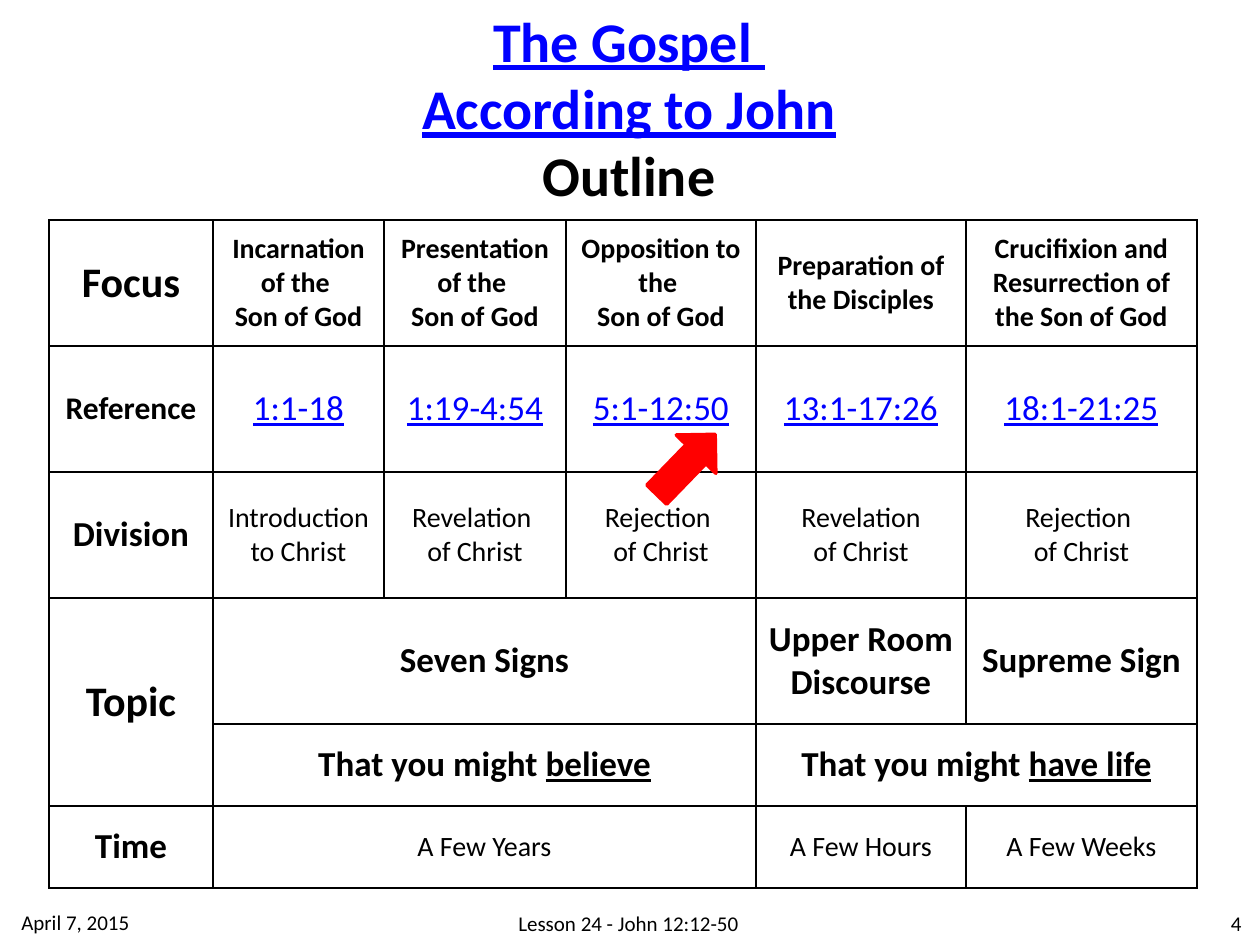
from dataclasses import dataclass

from lxml.etree import SubElement
from pptx import Presentation
from pptx.dml.color import RGBColor
from pptx.enum.shapes import MSO_SHAPE as Preset
from pptx.enum.text import MSO_ANCHOR as Anchor, MSO_AUTO_SIZE as AutoSize, PP_ALIGN as Align
from pptx.oxml.ns import qn
from pptx.util import Pt

PX = 914400 / 126
FONT = "Calibri"
COLORS = {"ink": "000000", "link": "0000FF", "arrow": "FF0000"}
COLUMNS = (164, 171, 182, 190, 210, 231)
ROWS = (126, 126, 126, 126, 82, 82)


@dataclass(frozen=True)
class Style:
    size: int
    bold: bool = False
    color: str = "ink"
    underline: bool = False


@dataclass(frozen=True)
class Cell:
    row: int
    column: int
    text: str
    style: Style
    rows: int = 1
    columns: int = 1
    underlined: str = ""


@dataclass(frozen=True)
class Label:
    text: str
    left: int
    top: int
    width: int
    height: int
    align: Align


HEAD, TOPIC = Style(24, True), Style(20, True)
FOCUS, SIDE = Style(16, True), Style(18, True)
REFERENCE = Style(20, color="link", underline=True)
BODY, FOOTER = Style(16), Style(12)
TITLE, TITLE_LINK = Style(32, True), Style(32, True, "link", True)

GRID = (
    ("Focus", HEAD, FOCUS, (
        "Incarnation of the \nSon of God", "Presentation of the \nSon of God",
        "Opposition to the \nSon of God", "Preparation of the Disciples",
        "Crucifixion and Resurrection of the Son of God")),
    ("Reference", SIDE, REFERENCE, (
        "1:1-18", "1:19-4:54", "5:1-12:50", "13:1-17:26", "18:1-21:25")),
    ("Division", TOPIC, BODY, (
        "Introduction to Christ", "Revelation \nof Christ", "Rejection \nof Christ",
        "Revelation\nof Christ", "Rejection \nof Christ")),
)
SUMMARY = (
    Cell(3, 0, "Topic", HEAD, rows=2),
    Cell(3, 1, "Seven Signs", TOPIC, columns=3),
    Cell(3, 4, "Upper Room Discourse", TOPIC),
    Cell(3, 5, "Supreme Sign", TOPIC),
    Cell(4, 1, "That you might ", TOPIC, columns=3, underlined="believe"),
    Cell(4, 4, "That you might ", TOPIC, columns=2, underlined="have life"),
    Cell(5, 0, "Time", TOPIC),
    Cell(5, 1, "A Few Years", BODY, columns=3),
    Cell(5, 4, "A Few Hours", BODY),
    Cell(5, 5, "A Few Weeks", BODY),
)
FOOTERS = (
    Label("Lesson 24 - John 12:12-50", 287, 898, 683, 50, Align.CENTER),
    Label("4", 1159, 898, 95, 50, Align.RIGHT),
    Label("April 7, 2015", 9, 897, 199, 50, Align.LEFT),
)


def px(*lengths: int) -> list[int]:
    """Turn pixel lengths into EMU."""
    return [round(length * PX) for length in lengths]


def rgb(name: str) -> RGBColor:
    """Look up a named colour."""
    return RGBColor.from_string(COLORS[name])


def style_paragraph(paragraph, style: Style, align: Align) -> None:
    """Apply alignment and one font to a paragraph."""
    paragraph.alignment = align
    font = paragraph.font
    font.name, font.size = FONT, Pt(style.size)
    font.bold, font.underline = style.bold, style.underline
    font.color.rgb = rgb(style.color)


def border_cell(cell) -> None:
    """Draw thin lines on all four sides of a table cell."""
    properties = cell._tc.get_or_add_tcPr()
    for position, side in enumerate(("lnL", "lnR", "lnT", "lnB")):
        line = SubElement(properties, qn(f"a:{side}"), w=str(Pt(1)))
        properties.remove(line)
        properties.insert(position, line)
        fill = SubElement(line, qn("a:solidFill"))
        SubElement(fill, qn("a:srgbClr"), val=COLORS["ink"])


def fill_cell(table, item: Cell) -> None:
    """Merge and write one cell of the outline."""
    cell = table.cell(item.row, item.column)
    if item.rows * item.columns > 1:
        cell.merge(table.cell(item.row + item.rows - 1, item.column + item.columns - 1))
    cell.text = item.text
    for paragraph in cell.text_frame.paragraphs:
        style_paragraph(paragraph, item.style, Align.CENTER)
    if item.underlined:
        run = cell.text_frame.paragraphs[-1].add_run()
        run.text, run.font.underline = item.underlined, True


def add_outline(slide) -> None:
    """Add the outline table."""
    frame = slide.shapes.add_table(
        len(ROWS), len(COLUMNS), *px(49, 220, sum(COLUMNS), sum(ROWS)))
    table = frame.table
    table.first_row = table.horz_banding = False
    for column, width in zip(table.columns, px(*COLUMNS)):
        column.width = width
    for row, height in zip(table.rows, px(*ROWS)):
        row.height = height
    for cell in table.iter_cells():
        cell.fill.background()
        cell.vertical_anchor = Anchor.MIDDLE
        border_cell(cell)
    for row, (head, head_style, style, texts) in enumerate(GRID):
        fill_cell(table, Cell(row, 0, head, head_style))
        for column, text in enumerate(texts, 1):
            fill_cell(table, Cell(row, column, text, style))
    for item in SUMMARY:
        fill_cell(table, item)


def add_title(slide) -> None:
    """Add the three-line title."""
    frame = slide.shapes.add_textbox(*px(401, 0, 456, 217)).text_frame
    frame.word_wrap, frame.auto_size = False, AutoSize.SHAPE_TO_FIT_TEXT
    frame.text = "The Gospel \nAccording to John\nOutline"
    for paragraph, style in zip(frame.paragraphs, (TITLE_LINK, TITLE_LINK, TITLE)):
        style_paragraph(paragraph, style, Align.CENTER)


def add_arrow(slide) -> None:
    """Add the arrow that points at the current reference."""
    arrow = slide.shapes.add_shape(Preset.RIGHT_ARROW, *px(644, 437, 84, 55))
    arrow.rotation = 314.1
    arrow.shadow.inherit = False
    arrow.fill.solid()
    arrow.fill.fore_color.rgb = arrow.line.color.rgb = rgb("arrow")
    arrow.line.width = Pt(2)


def add_footer(slide, label: Label) -> None:
    """Add one footer text."""
    box = slide.shapes.add_textbox(*px(label.left, label.top, label.width, label.height))
    frame = box.text_frame
    frame.word_wrap, frame.vertical_anchor = True, Anchor.MIDDLE
    frame.text = label.text
    style_paragraph(frame.paragraphs[0], FOOTER, label.align)


def main() -> None:
    """Build the slide and save it."""
    presentation = Presentation()
    presentation.slide_width, presentation.slide_height = px(1260, 945)
    slide = presentation.slides.add_slide(presentation.slide_layouts[6])
    add_title(slide)
    add_outline(slide)
    add_arrow(slide)
    for label in FOOTERS:
        add_footer(slide, label)
    presentation.save("out.pptx")


if __name__ == "__main__":
    main()
